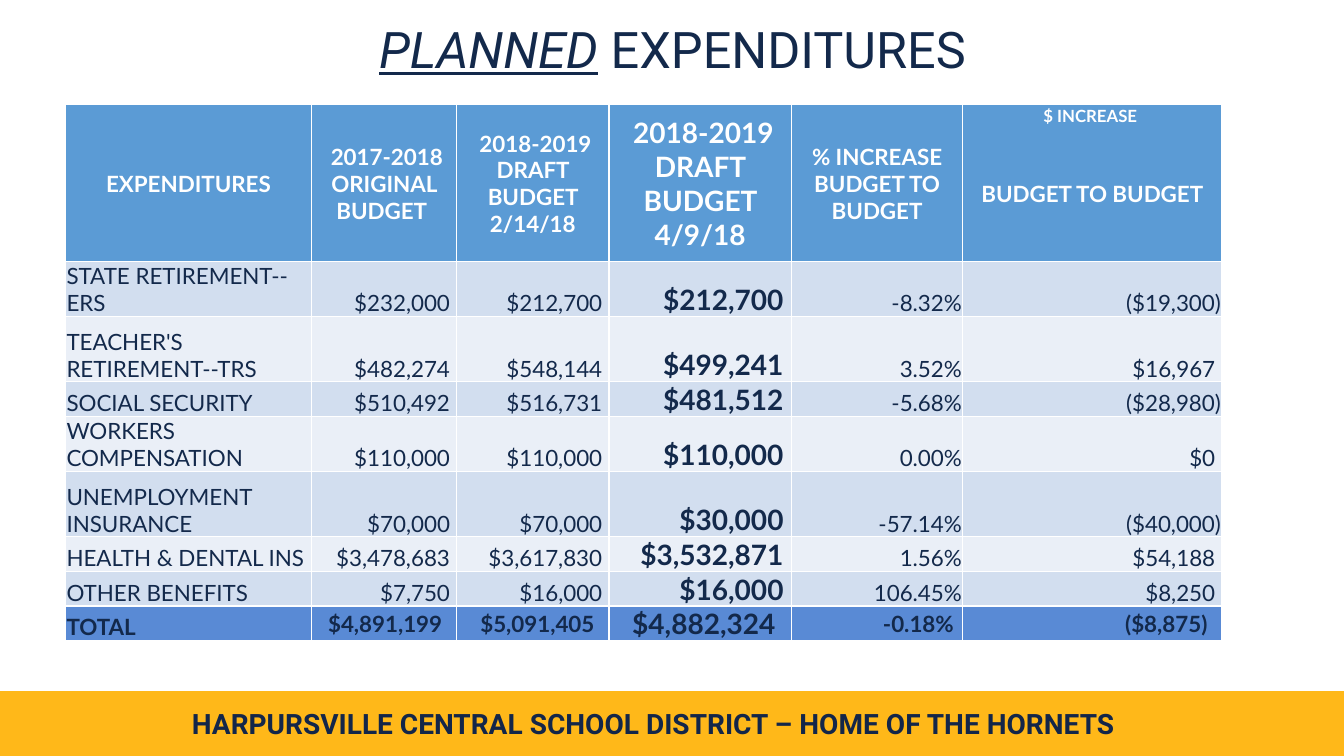
import lxml.etree
import pptx
import pptx.dml.color
import pptx.enum.shapes
import pptx.enum.text
import pptx.oxml.ns
import pptx.util

Inches = pptx.util.Inches
Align = pptx.enum.text.PP_ALIGN
Anchor = pptx.enum.text.MSO_ANCHOR

NAVY, WHITE, GOLD = "13294B", "FFFFFF", "FFB819"
HEADER_FILL, TOTAL_FILL = "5B9BD5", "598AD5"
BAND_FILLS = ["D2DEEF", "EAEFF7"]
COLUMN_WIDTHS = [2.44, 1.44, 1.51, 1.81, 1.7, 2.57]
ROW_HEIGHTS = [0.16, 0.7, 0.35, 0.65, 0.33, 0.33, 0.65, 0.33, 0.33, 0.33]
HEADER_ROWS = 2
CURRENT_DRAFT = 3  # column with the larger figures
HEADERS = [
    ["EXPENDITURES", " 2017-2018 ORIGINAL BUDGET ", " 2018-2019 DRAFT BUDGET 2/14/18",
     " 2018-2019 DRAFT BUDGET 4/9/18", "% INCREASE BUDGET TO BUDGET", "$ INCREASE "],
    ["", "", "", "", "", "BUDGET TO BUDGET"],
]
EXPENDITURES = [
    ["STATE RETIREMENT--ERS", "$232,000 ", "$212,700 ", "$212,700 ", "-8.32%", "($19,300)"],
    ["TEACHER'S RETIREMENT--TRS", "$482,274 ", "$548,144 ", "$499,241 ", "3.52%", "$16,967 "],
    ["SOCIAL SECURITY", "$510,492 ", "$516,731 ", "$481,512 ", "-5.68%", "($28,980)"],
    ["WORKERS COMPENSATION", "$110,000 ", "$110,000 ", "$110,000 ", "0.00%", "$0 "],
    ["UNEMPLOYMENT INSURANCE", "$70,000 ", "$70,000 ", "$30,000 ", "-57.14%", "($40,000)"],
    ["HEALTH & DENTAL INS", "$3,478,683 ", "$3,617,830 ", "$3,532,871 ", "1.56%", "$54,188 "],
    ["OTHER BENEFITS", "$7,750 ", "$16,000 ", "$16,000 ", "106.45%", "$8,250 "],
    ["TOTAL", "$4,891,199 ", "$5,091,405 ", "$4,882,324 ", "-0.18%", "($8,875) "],
]


def rgb(value):
    return pptx.dml.color.RGBColor.from_string(value)


def set_all(target, values):
    for name, value in values.items():
        setattr(target, name, value)


class SlideBuilder:
    heading_font = "Roboto"
    table_font = "Lato"

    def __init__(self, slide):
        self.slide = slide

    def rectangle(self, box, fill, line=None):
        shape = self.slide.shapes.add_shape(
            pptx.enum.shapes.MSO_SHAPE.RECTANGLE, *map(Inches, box))
        shape.shadow.inherit = False
        shape.fill.solid()
        shape.fill.fore_color.rgb = rgb(fill)
        if line:
            shape.line.color.rgb = rgb(line)
            shape.line.width = pptx.util.Pt(1)
        else:
            shape.line.fill.background()
        return shape

    def text_box(self, box):
        return self.slide.shapes.add_textbox(*map(Inches, box))

    def add_text(self, frame, runs, font, size, color, align=Align.CENTER, anchor=Anchor.MIDDLE):
        """Fill a text frame with one paragraph of (text, font values) runs."""
        set_all(frame, {"word_wrap": True, "vertical_anchor": anchor})
        paragraph = frame.paragraphs[0]
        paragraph.alignment = align
        for text, values in runs:
            run = paragraph.add_run()
            run.text = text
            set_all(run.font, {"name": font, "size": pptx.util.Pt(size), **values})
            run.font.color.rgb = rgb(color)
        return paragraph

    def cell(self, cell, text, fill, size, color, bold, align, anchor, right_margin):
        self.add_text(cell.text_frame, [(text, {"bold": bold})] if text else [],
                      self.table_font, size, color, align)
        set_all(cell, {
            "vertical_anchor": anchor, "margin_left": Inches(0.01), "margin_top": Inches(0.01),
            "margin_right": Inches(right_margin), "margin_bottom": 0})
        cell.fill.solid()
        cell.fill.fore_color.rgb = rgb(fill)

    def borders(self, cell, widths):
        """Draw white cell edges; a width of 0 hides the edge."""
        properties = cell._tc.get_or_add_tcPr()
        for position, (edge, width) in enumerate(zip("LRTB", widths)):
            line = lxml.etree.Element(
                pptx.oxml.ns.qn("a:ln" + edge), w=str(pptx.util.Pt(width)))
            if width:
                fill = lxml.etree.SubElement(line, pptx.oxml.ns.qn("a:solidFill"))
                lxml.etree.SubElement(fill, pptx.oxml.ns.qn("a:srgbClr"), val=WHITE)
            else:
                lxml.etree.SubElement(line, pptx.oxml.ns.qn("a:noFill"))
            properties.insert(position, line)

    def budget_table(self, box):
        rows = HEADERS + EXPENDITURES
        frame = self.slide.shapes.add_table(len(rows), len(COLUMN_WIDTHS), *map(Inches, box))
        table = frame.table
        set_all(table, {"first_row": False, "horz_banding": False})
        for column, width in zip(table.columns, COLUMN_WIDTHS):
            column.width = Inches(width)
        for row, height in zip(table.rows, ROW_HEIGHTS):
            row.height = Inches(height)
        frame.height = Inches(box[3])

        last_row, last_column = len(rows) - 1, len(COLUMN_WIDTHS) - 1
        for r, texts in enumerate(rows):
            header, total = r < HEADER_ROWS, r == last_row
            if header:
                fill = HEADER_FILL
            else:
                fill = TOTAL_FILL if total else BAND_FILLS[r % 2]
            for c, text in enumerate(texts):
                size = 20 if c == CURRENT_DRAFT else 16
                if r == 0 and c == last_column:
                    size = 12
                if header:
                    align = Align.CENTER
                else:
                    align = Align.RIGHT if c else Align.LEFT
                cell = table.cell(r, c)
                self.cell(
                    cell, text, fill, size,
                    color=WHITE if header else NAVY,
                    bold=header or total or c == CURRENT_DRAFT,
                    align=align,
                    anchor=Anchor.MIDDLE if header or (total and c) else Anchor.BOTTOM,
                    right_margin=0.09 if total and c else 0.01)
                top = {1: 0, HEADER_ROWS: 1.5}.get(r, 1)
                bottom = 1.5 if header else 1
                if r == 0 and c == last_column:
                    bottom = 0
                self.borders(cell, [1, 1, top, bottom])
        for c in range(last_column):
            table.cell(0, c).merge(table.cell(HEADER_ROWS - 1, c))


def main():
    presentation = pptx.Presentation()
    set_all(presentation, {"slide_width": Inches(13.33), "slide_height": Inches(7.5)})
    builder = SlideBuilder(presentation.slides.add_slide(presentation.slide_layouts[6]))

    builder.rectangle([0, 6.86, 13.33, 0.63], GOLD, GOLD)
    footer = builder.text_box([1.76, 6.96, 9.44, 0.44])
    builder.add_text(
        footer.text_frame,
        [("HARPURSVILLE CENTRAL SCHOOL DISTRICT – HOME OF THE HORNETS", {"bold": True})],
        builder.heading_font, 20, "132649", anchor=Anchor.TOP)

    title = builder.rectangle([0.92, 0, 11.5, 1.04], WHITE)
    heading = builder.add_text(
        title.text_frame,
        [("PLANNED", {"italic": True, "underline": True}), (" EXPENDITURES", {})],
        builder.heading_font, 36, NAVY)
    heading.line_spacing = 0.9

    builder.budget_table([0.65, 1.04, 11.47, 5.11])
    presentation.save("out.pptx")


if __name__ == "__main__":
    main()
